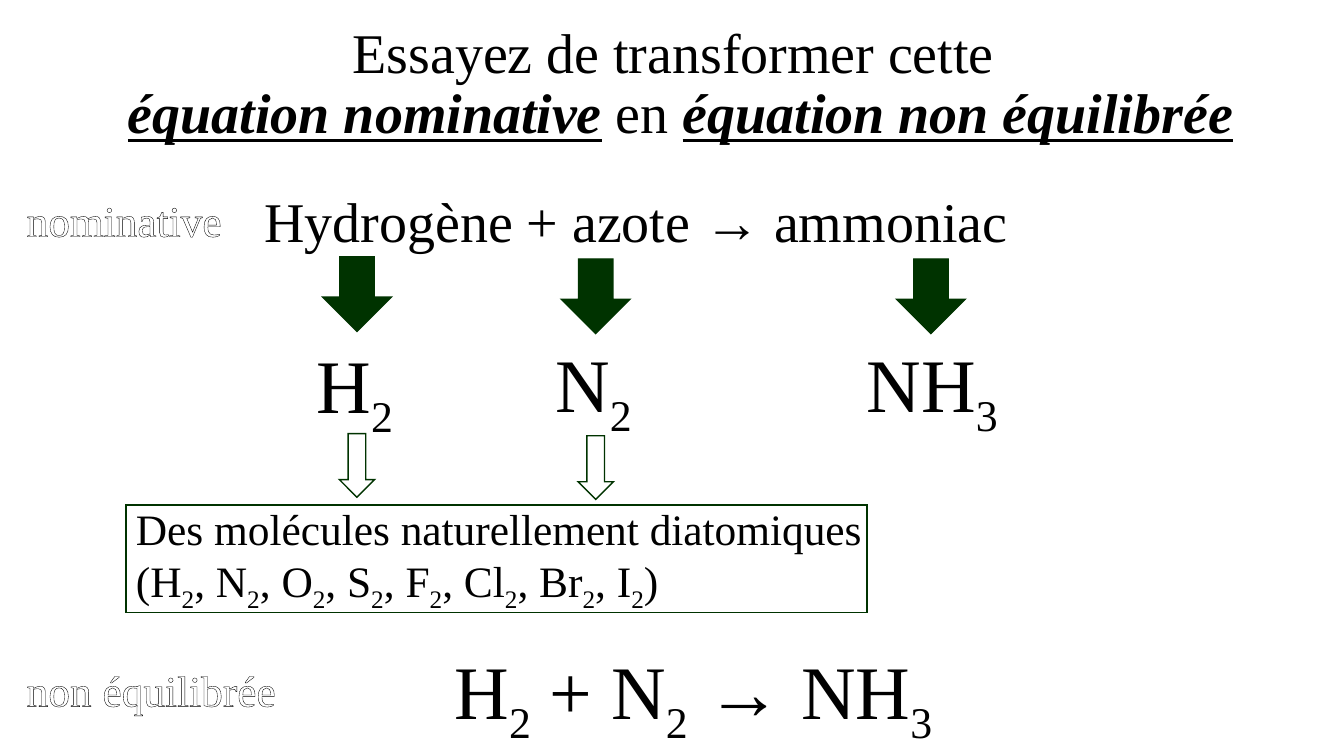
from lxml import etree
from pptx import Presentation
from pptx.dml.color import RGBColor
from pptx.enum import shapes, text
from pptx.oxml import ns
from pptx.util import Pt

BLACK = RGBColor(0, 0, 0)
WHITE = RGBColor(255, 255, 255)
GREEN = RGBColor(0, 0x33, 0)
FACE = "Times New Roman"


def style(para, size, color=BLACK):
    """Set the font of a whole paragraph."""
    para.font.name = FACE
    para.font.size = Pt(size)
    para.font.color.rgb = color


def fill_para(para, words, size, color=BLACK):
    """Write words, with the parts between underscores as subscripts."""
    style(para, size, color)
    for i, part in enumerate(words.split("_")):
        if part:
            run = para.add_run()
            run.text = part
            if i % 2:
                run.font._element.set("baseline", "-25000")


def label(slide, box, lines, size, color=BLACK, wrap=False):
    """Add a text box holding one paragraph per line."""
    frame = slide.shapes.add_textbox(*map(Pt, box)).text_frame
    frame.word_wrap = wrap
    frame.auto_size = text.MSO_AUTO_SIZE.SHAPE_TO_FIT_TEXT
    for i, line in enumerate(lines):
        para = frame.add_paragraph() if i else frame.paragraphs[0]
        fill_para(para, line, size, color)
    return frame


def block(slide, kind, box, fill):
    """Add a preset shape with a green outline."""
    shape = slide.shapes.add_shape(kind, *map(Pt, box))
    shape.shadow.inherit = False
    shape.fill.solid()
    shape.fill.fore_color.rgb = fill
    shape.line.color.rgb = GREEN
    shape.line.width = Pt(1)
    etree.SubElement(shape.line._get_or_add_ln(), ns.qn("a:miter"), lim="800000")


def heading(slide, box):
    """Place and write the title."""
    title = slide.shapes.title
    title.left, title.top, title.width, title.height = map(Pt, box)
    frame = title.text_frame
    frame.word_wrap = True
    frame.auto_size = text.MSO_AUTO_SIZE.NONE
    frame.vertical_anchor = text.MSO_ANCHOR.MIDDLE
    para = frame.paragraphs[0]
    para.alignment = text.PP_ALIGN.CENTER
    para.line_spacing = 0.9
    style(para, 40)
    para.add_run().text = "Essayez de transformer cette "
    para.add_line_break()
    parts = ("équation nominative", " en ", "équation non équilibrée")
    for i, part in enumerate(parts):
        run = para.add_run()
        run.text = part
        if i != 1:
            run.font.bold = run.font.italic = run.font.underline = True


def tag(slide, box, words):
    """Add a white row name with thin outlined letters."""
    frame = label(slide, box, [words], 31, WHITE)
    props = frame.paragraphs[0].runs[0].font._element
    line = etree.Element(ns.qn("a:ln"), w=str(Pt(0.75)))
    fill = etree.SubElement(line, ns.qn("a:solidFill"))
    etree.SubElement(fill, ns.qn("a:srgbClr"), val=str(BLACK))
    props.insert(0, line)


def species(slide, box, words, mid, drop, paired):
    """Add a formula, the arrow above it and, if paired, one below."""
    left, top, width, height = box
    arrow = shapes.MSO_SHAPE.DOWN_ARROW
    block(slide, arrow, (mid - 24.5, top - drop, 49, 53.3), GREEN)
    label(slide, box, [words], 54)
    if paired:
        block(slide, arrow, (mid - 12.6, top - drop + 126.3, 25.2, 45.4), WHITE)


def note(slide, box):
    """Add the framed note on diatomic molecules."""
    left, top, width, height = box
    block(slide, shapes.MSO_SHAPE.RECTANGLE, box, WHITE)
    names = ", ".join(f"{name}_2_" for name in "H N O S F Cl Br I".split())
    lines = ["Des molécules naturellement diatomiques", f"({names})"]
    label(slide, (left, top - 5.7, width + 72, height + 5), lines, 31, wrap=True)


def main():
    """Build the slide and save it."""
    deck = Presentation()
    deck.slide_width, deck.slide_height = Pt(960), Pt(540)
    slide = deck.slides.add_slide(deck.slide_layouts[5])
    heading(slide, (12, 8.6, 948, 105))
    tag(slide, (12, 134.6, 155.5, 44.6), "nominative")
    tag(slide, (12, 470.2, 194.4, 44.6), "non équilibrée")
    label(slide, (181.8, 129.6, 550.8, 55.4), ["Hydrogène + azote → ammoniac"], 40)
    species(slide, (219, 238, 72, 72.7), "H_2", 255, 54.5, True)
    species(slide, (389.5, 236.9, 72, 72.7), "N_2", 425.5, 51.9, True)
    species(slide, (612, 236.9, 112, 72.7), "NH_3", 665, 51.9, False)
    note(slide, (90, 360.7, 529.2, 77))
    label(slide, (317.5, 456.5, 366.5, 72.7), ["H_2_ + N_2_ → NH_3"], 54)
    deck.save("out.pptx")


if __name__ == "__main__":
    main()
